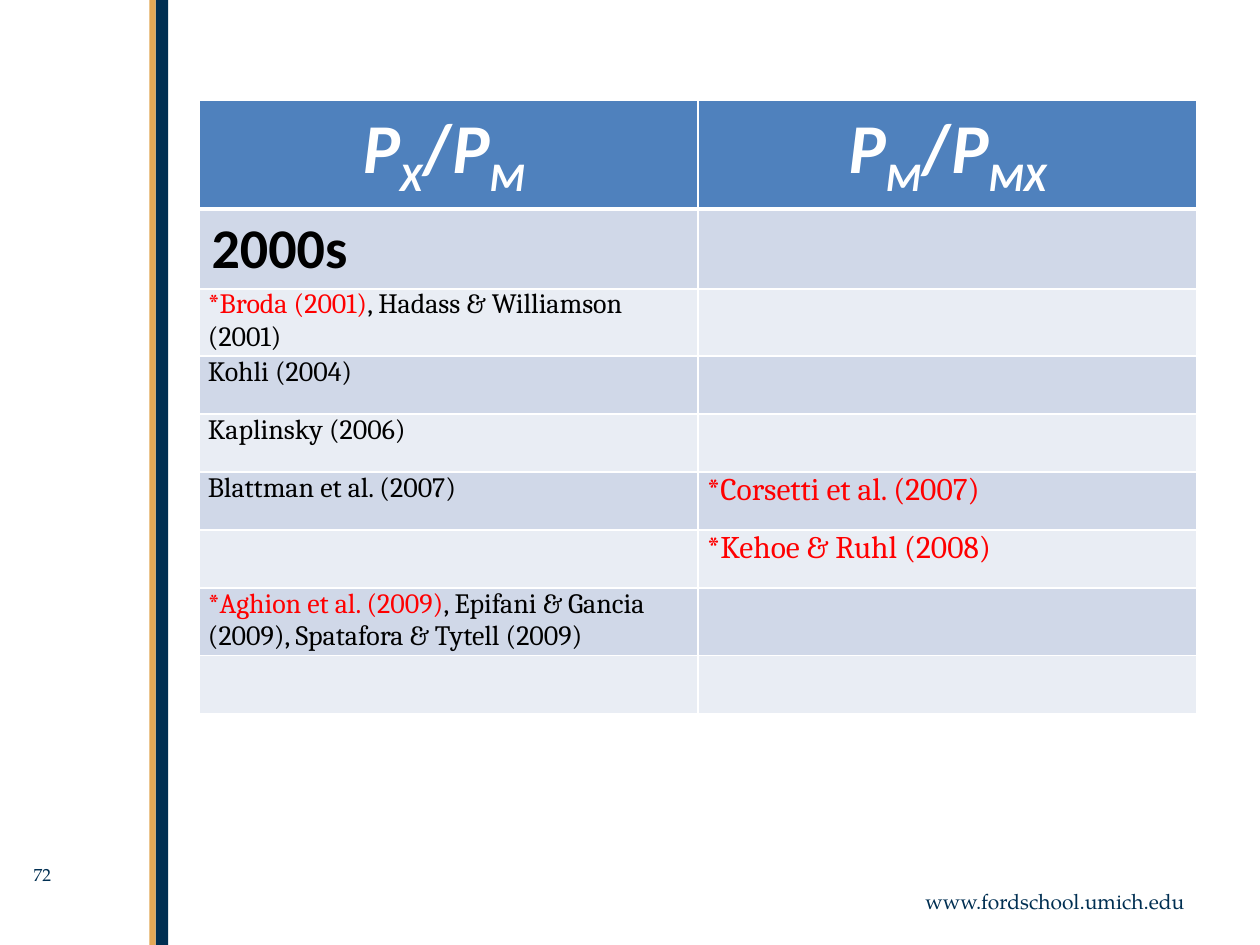
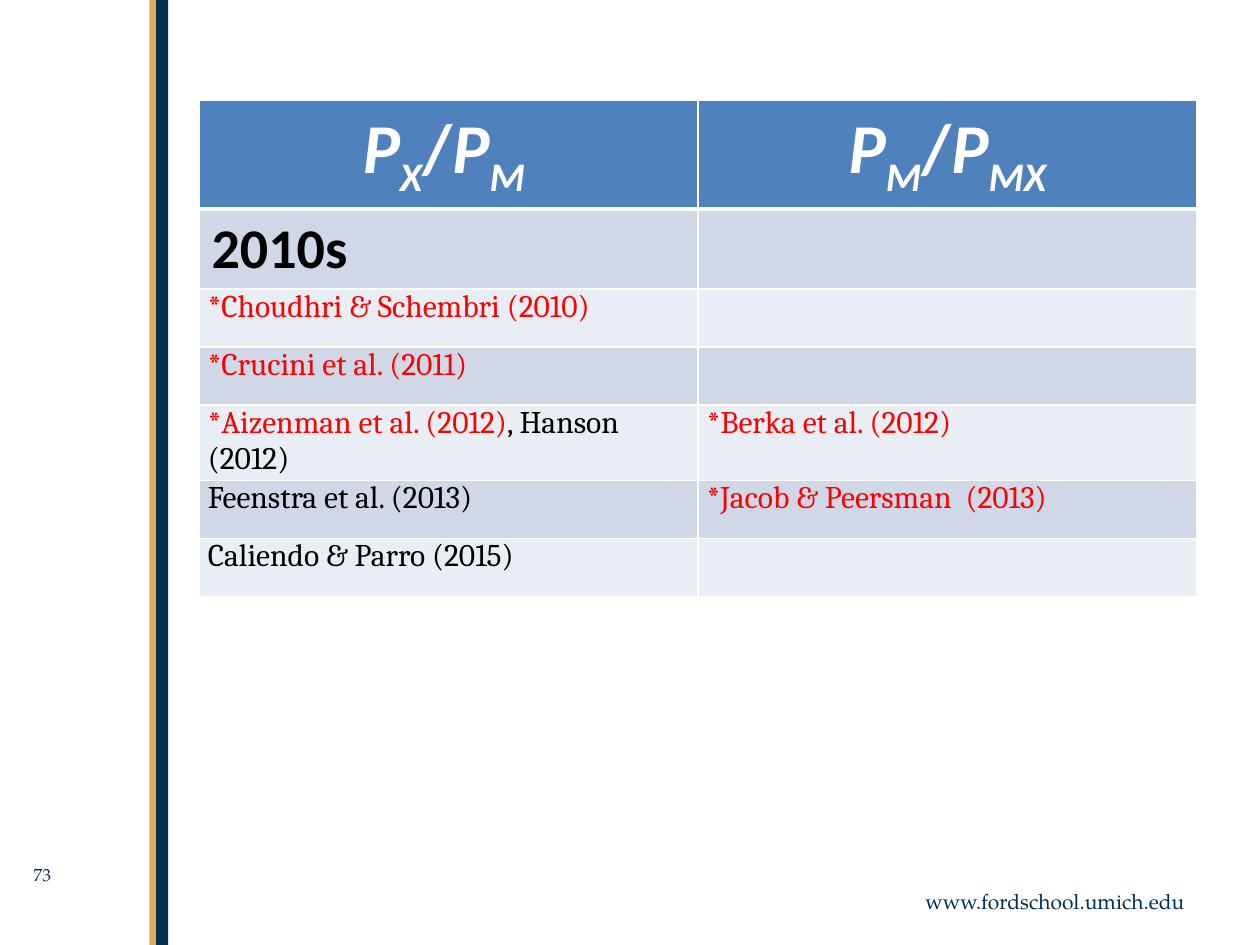
import lxml.etree
import pptx
import pptx.dml.color
import pptx.enum.shapes
import pptx.enum.text
import pptx.oxml.ns
import pptx.util

Cm = pptx.util.Cm
Pt = pptx.util.Pt
RGBColor = pptx.dml.color.RGBColor
Align = pptx.enum.text.PP_ALIGN

NAVY = RGBColor(0x00, 0x2F, 0x52)
GOLD = RGBColor(0xE3, 0xA8, 0x56)
BLUE = RGBColor(0x4F, 0x81, 0xBD)
BANDS = (RGBColor(0xE9, 0xED, 0xF4), RGBColor(0xD0, 0xD8, 0xE8))
WHITE = RGBColor(0xFF, 0xFF, 0xFF)
BLACK = RGBColor(0x00, 0x00, 0x00)
RED = RGBColor(0xFF, 0x00, 0x00)

HEADINGS = (
    (("P", "X"), ("P", "M ")),
    (("P", "M"), ("P", "MX")),
)
DECADES = (
    (72, "2000s", 16, (
        ("*Broda (2001), Hadass & Williamson (2001)", ""),
        ("Kohli (2004)", ""),
        ("Kaplinsky (2006)", ""),
        ("Blattman et al. (2007)", "*Corsetti et al. (2007)"),
        ("", "*Kehoe & Ruhl (2008)"),
        ("*Aghion et al. (2009), Epifani & Gancia (2009), Spatafora & Tytell (2009)", ""),
        ("", ""),
    )),
    (73, "2010s", 18, (
        ("*Choudhri & Schembri (2010)", ""),
        ("*Crucini et al. (2011)", ""),
        ("*Aizenman et al. (2012), Hanson (2012)", "*Berka et al. (2012)"),
        ("Feenstra et al. (2013)", "*Jacob & Peersman  (2013)"),
        ("Caliendo & Parro (2015)", ""),
    )),
)


class LiteratureDeck:
    """Builds slides that list papers by decade and by price ratio."""

    heading_font = "Calibri"
    citation_font = "Cambria"
    footer_font = "TeX Gyre Pagella"

    def __init__(self):
        self.presentation = pptx.Presentation()
        self.presentation.slide_width = Cm(25.4)
        self.presentation.slide_height = Cm(19.05)
        self.slide = None

    def add_slide(self, number):
        self.slide = self.presentation.slides.add_slide(self.presentation.slide_layouts[6])
        self.add_stripe(3.14, 0.25, NAVY)
        self.add_stripe(3.01, 0.13, GOLD)
        self.add_footer("www.fordschool.umich.edu", 17.78, 17.78, 6.35, 0.76, 12, Align.RIGHT)
        self.add_footer(str(number), 0.43, 17.3, 2.34, 0.86, 10, Align.LEFT)

    def add_stripe(self, left, width, color):
        stripe = self.slide.shapes.add_shape(
            pptx.enum.shapes.MSO_SHAPE.RECTANGLE,
            Cm(left), 0, Cm(width), self.presentation.slide_height)
        stripe.shadow.inherit = False
        stripe.fill.solid()
        stripe.fill.fore_color.rgb = color
        stripe.line.fill.background()

    def add_footer(self, text, left, top, width, height, size, alignment):
        box = self.slide.shapes.add_textbox(Cm(left), Cm(top), Cm(width), Cm(height))
        box.text_frame.word_wrap = True
        paragraph = box.text_frame.paragraphs[0]
        paragraph.text = text
        paragraph.alignment = alignment
        self.style_font(paragraph.font, self.footer_font, size, NAVY)

    def style_font(self, font, name, size, color=None, bold=False):
        font.name = name
        font.size = Pt(size)
        font.bold = bold
        if color is not None:
            font.color.rgb = color

    def add_table(self, decade, left_size, citations):
        row_count = len(citations) + 2
        table = self.slide.shapes.add_table(
            row_count, 2, Cm(4.01), Cm(2.03), Cm(20.12), Cm(1.32 + 1.17 * (row_count - 1))).table
        table.horz_banding = False
        for index, row in enumerate(table.rows):
            row.height = Cm(1.17 if index else 1.32)
            for cell in row.cells:
                self.style_cell(cell, BANDS[index % 2] if index else BLUE, 1 if index else 3)
        for column, ratio in enumerate(HEADINGS):
            self.write_ratio(table.cell(0, column), ratio)
        paragraph = table.cell(1, 0).text_frame.paragraphs[0]
        paragraph.text = decade
        self.style_font(paragraph.font, self.heading_font, 32, BLACK, True)
        for index, pair in enumerate(citations, start=2):
            for column, (text, size) in enumerate(zip(pair, (left_size, 18))):
                if text:
                    self.write_citation(table.cell(index, column), text, size)

    def style_cell(self, cell, color, bottom_width):
        properties = cell._tc.get_or_add_tcPr()
        for side, width in (("L", 1), ("R", 1), ("T", 1), ("B", bottom_width)):
            line = lxml.etree.SubElement(
                properties, pptx.oxml.ns.qn(f"a:ln{side}"), w=str(Pt(width)))
            fill = lxml.etree.SubElement(line, pptx.oxml.ns.qn("a:solidFill"))
            lxml.etree.SubElement(fill, pptx.oxml.ns.qn("a:srgbClr"), val=str(WHITE))
        cell.fill.solid()
        cell.fill.fore_color.rgb = color

    def write_ratio(self, cell, ratio):
        paragraph = cell.text_frame.paragraphs[0]
        paragraph.alignment = Align.CENTER
        self.style_font(paragraph.font, self.heading_font, 40, WHITE, True)
        (top, top_index), (bottom, bottom_index) = ratio
        for text, italic, baseline in (
                (top, True, 0), (top_index, True, -25000), ("/", False, 0),
                (bottom, True, 0), (bottom_index, True, -25000)):
            run = paragraph.add_run()
            run.text = text
            run.font.italic = italic
            run.font._element.set("baseline", str(baseline))

    def write_citation(self, cell, text, size):
        cell.margin_left = cell.margin_right = Cm(0.18)
        cell.margin_top = cell.margin_bottom = 0
        paragraph = cell.text_frame.paragraphs[0]
        self.style_font(paragraph.font, self.citation_font, size)
        split = text.index(")") + 1 if text.startswith("*") else 0
        for part, color in ((text[:split], RED), (text[split:], BLACK)):
            if part:
                run = paragraph.add_run()
                run.text = part
                run.font.color.rgb = color


def main():
    deck = LiteratureDeck()
    for number, decade, left_size, citations in DECADES:
        deck.add_slide(number)
        deck.add_table(decade, left_size, citations)
    deck.presentation.save("out.pptx")


if __name__ == "__main__":
    main()
